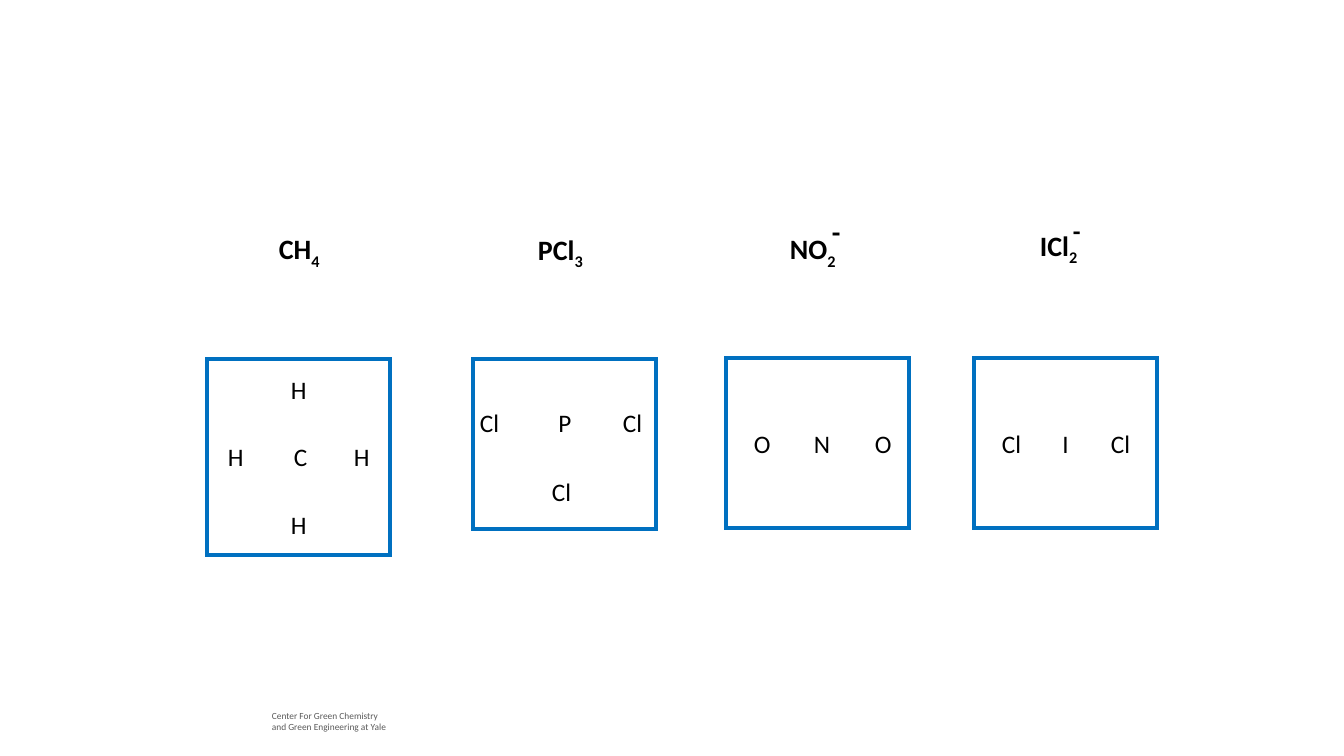
"""Build a slide of four molecules, each a formula above a framed layout of its atoms."""
from dataclasses import dataclass

from lxml.etree import SubElement
from pptx import Presentation
from pptx.dml.color import RGBColor
from pptx.enum.shapes import MSO_SHAPE
from pptx.enum.text import MSO_AUTO_SIZE
from pptx.oxml.ns import qn
from pptx.util import Emu, Pt

PX = 914400 / 100.8
SLIDE_SIZE = (1344, 756)
FRAME_WIDTH = 183
FORMULA_HEIGHT = 44
ATOM_HEIGHT = 40
ATOM_WIDTHS = {"H": 36, "C": 34, "Cl": 42, "P": 33, "N": 36, "O": 38, "I": 27}


@dataclass(frozen=True)
class Theme:
    font: str = "Calibri"
    ink: RGBColor = RGBColor(0, 0, 0)
    credit_ink: RGBColor = RGBColor(0x59, 0x59, 0x59)
    frame: RGBColor = RGBColor(0x00, 0x70, 0xC0)
    frame_line: float = 3
    formula: float = 20
    atom: float = 18
    credit: float = 6.75


THEME = Theme()

CREDIT = ["Center For Green Chemistry", "and Green Engineering at Yale"]
CREDIT_BOX = (262, 705, 187, 33)

# Each atom row: top, then (element, centre x) pairs.
MOLECULES = [
    {"formula": ("CH", "4"), "formula_at": (269, 227, 62), "frame": (207, 359, 196),
     "rows": [(369, [("H", 299)]),
              (436, [("H", 236), ("C", 301), ("H", 362)]),
              (504, [("H", 299)])]},
    {"formula": ("PCl", "3"), "formula_at": (528, 228, 67), "frame": (473, 359, 170),
     "rows": [(402, [("Cl", 491), ("P", 565), ("Cl", 634)]),
              (471, [("Cl", 563)])]},
    {"formula": ("NO", "2"), "formula_at": (780, 227, 68), "frame": (726, 358, 170),
     "charge": (822, 210, 29, 44, THEME.formula),
     "rows": [(423, [("O", 763), ("N", 822), ("O", 884)])]},
    {"formula": ("ICl", "2"), "formula_at": (1030, 224, 60), "frame": (974, 358, 170),
     "charge": (1063, 210, 28, 40, THEME.atom),
     "rows": [(423, [("Cl", 1013), ("I", 1066), ("Cl", 1122)])]},
]


def px(*lengths):
    return [Emu(round(length * PX)) for length in lengths]


def add_text(slide, box, lines, size, color=THEME.ink, bold=False, wrap=False):
    frame = slide.shapes.add_textbox(*px(*box)).text_frame
    frame.word_wrap = wrap
    frame.auto_size = MSO_AUTO_SIZE.SHAPE_TO_FIT_TEXT
    frame.text = "\n".join(lines)
    for paragraph in frame.paragraphs:
        font = paragraph.font
        font.name, font.size, font.bold = THEME.font, Pt(size), bold
        font.color.rgb = color
    return frame


def add_formula(slide, molecule):
    symbol, count = molecule["formula"]
    box = (*molecule["formula_at"], FORMULA_HEIGHT)
    formula = add_text(slide, box, [symbol], THEME.formula, bold=True)
    subscript = formula.paragraphs[0].add_run()
    subscript.text = count
    subscript.font._element.set("baseline", "-25000")
    if "charge" in molecule:
        *charge_box, size = molecule["charge"]
        add_text(slide, charge_box, ["-"], size, bold=True)


def add_atoms(slide, molecule):
    for top, atoms in molecule["rows"]:
        for element, centre in atoms:
            width = ATOM_WIDTHS[element]
            add_text(slide, (centre - width / 2, top, width, ATOM_HEIGHT), [element], THEME.atom)


def add_frame(slide, molecule):
    left, top, height = molecule["frame"]
    frame = slide.shapes.add_shape(MSO_SHAPE.RECTANGLE, *px(left, top, FRAME_WIDTH, height))
    frame.shadow.inherit = False
    frame.fill.background()
    frame.line.color.rgb = THEME.frame
    frame.line.width = Pt(THEME.frame_line)
    outline = frame._element.spPr.find(qn("a:ln"))
    SubElement(outline, qn("a:miter"), lim="800000")


def main():
    deck = Presentation()
    deck.slide_width, deck.slide_height = px(*SLIDE_SIZE)
    slide = deck.slides.add_slide(deck.slide_layouts[6])
    add_text(slide, CREDIT_BOX, CREDIT, THEME.credit, THEME.credit_ink, wrap=True)
    for molecule in MOLECULES:
        add_formula(slide, molecule)
        add_atoms(slide, molecule)
        add_frame(slide, molecule)
    deck.save("out.pptx")


if __name__ == "__main__":
    main()
